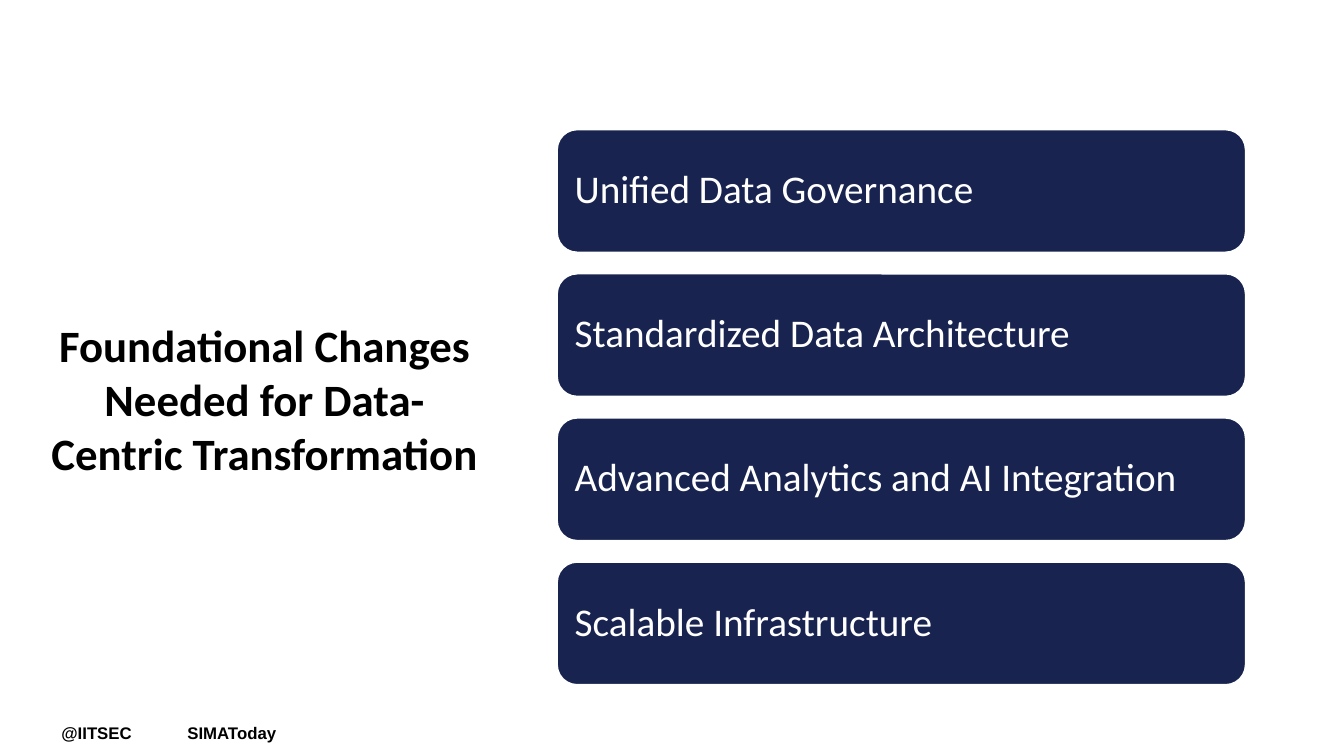
from pptx import Presentation
from pptx.dml.color import RGBColor
from pptx.enum.shapes import MSO_SHAPE
from pptx.enum.text import MSO_ANCHOR, MSO_AUTO_SIZE, PP_ALIGN
from pptx.util import Inches, Pt

COLORS = {"navy": "182350", "white": "FFFFFF", "black": "000000"}
CHANGES = [
    "Unified Data Governance",
    "Standardized Data Architecture",
    "Advanced Analytics and AI Integration",
    "Scalable Infrastructure",
]
HANDLES = [("@IITSEC", 0.51, 0.92), ("SIMAToday", 1.76, 1.13)]
FIRST_TOP, PITCH = 1.28, 1.43


def color(name):
    return RGBColor.from_string(COLORS[name])


def format_text(paragraph, font_name, size, color_name, bold=False):
    font = paragraph.runs[0].font
    font.name = font_name
    font.size = Pt(size)
    font.bold = bold
    font.color.rgb = color(color_name)


presentation = Presentation()
presentation.slide_width = Inches(13.33)
presentation.slide_height = Inches(7.5)
slide = presentation.slides.add_slide(presentation.slide_layouts[5])
slide.background.fill.solid()
slide.background.fill.fore_color.rgb = color("white")

# Social handles in the footer
for handle, left, width in HANDLES:
    text_box = slide.shapes.add_textbox(
        Inches(left), Inches(7.12), Inches(width), Inches(0.3))
    text_frame = text_box.text_frame
    text_frame.word_wrap = False
    text_frame.text = handle
    format_text(text_frame.paragraphs[0], "Arial", 12, "black", bold=True)

# Title on the left
title = slide.shapes.title
title.left, title.top = Inches(0.33), Inches(0.87)
title.width, title.height = Inches(4.59), Inches(6.17)
text_frame = title.text_frame
text_frame.text = "Foundational Changes Needed for Data-Centric Transformation"
text_frame.word_wrap = True
text_frame.auto_size = MSO_AUTO_SIZE.NONE
text_frame.vertical_anchor = MSO_ANCHOR.MIDDLE
text_frame.paragraphs[0].alignment = PP_ALIGN.CENTER
format_text(text_frame.paragraphs[0], "Calibri", 32, "black", bold=True)

# One bar for each change
for index, change in enumerate(CHANGES):
    bar = slide.shapes.add_shape(
        MSO_SHAPE.ROUNDED_RECTANGLE, Inches(5.52),
        Inches(FIRST_TOP + index * PITCH), Inches(6.84), Inches(1.23))
    bar.shadow.inherit = False
    bar.fill.solid()
    bar.fill.fore_color.rgb = color("navy")
    bar.line.color.rgb = color("white")
    bar.line.width = Pt(2)
    text_frame = bar.text_frame
    text_frame.text = change
    text_frame.word_wrap = True
    text_frame.vertical_anchor = MSO_ANCHOR.MIDDLE
    # The rounded corners already inset the text by 0.06 inches
    text_frame.margin_left = text_frame.margin_right = Inches(0.12)
    text_frame.margin_top = text_frame.margin_bottom = Inches(0.12)
    paragraph = text_frame.paragraphs[0]
    paragraph.alignment = PP_ALIGN.LEFT
    paragraph.line_spacing = 0.9
    format_text(paragraph, "Calibri", 28, "white")

presentation.save("out.pptx")
